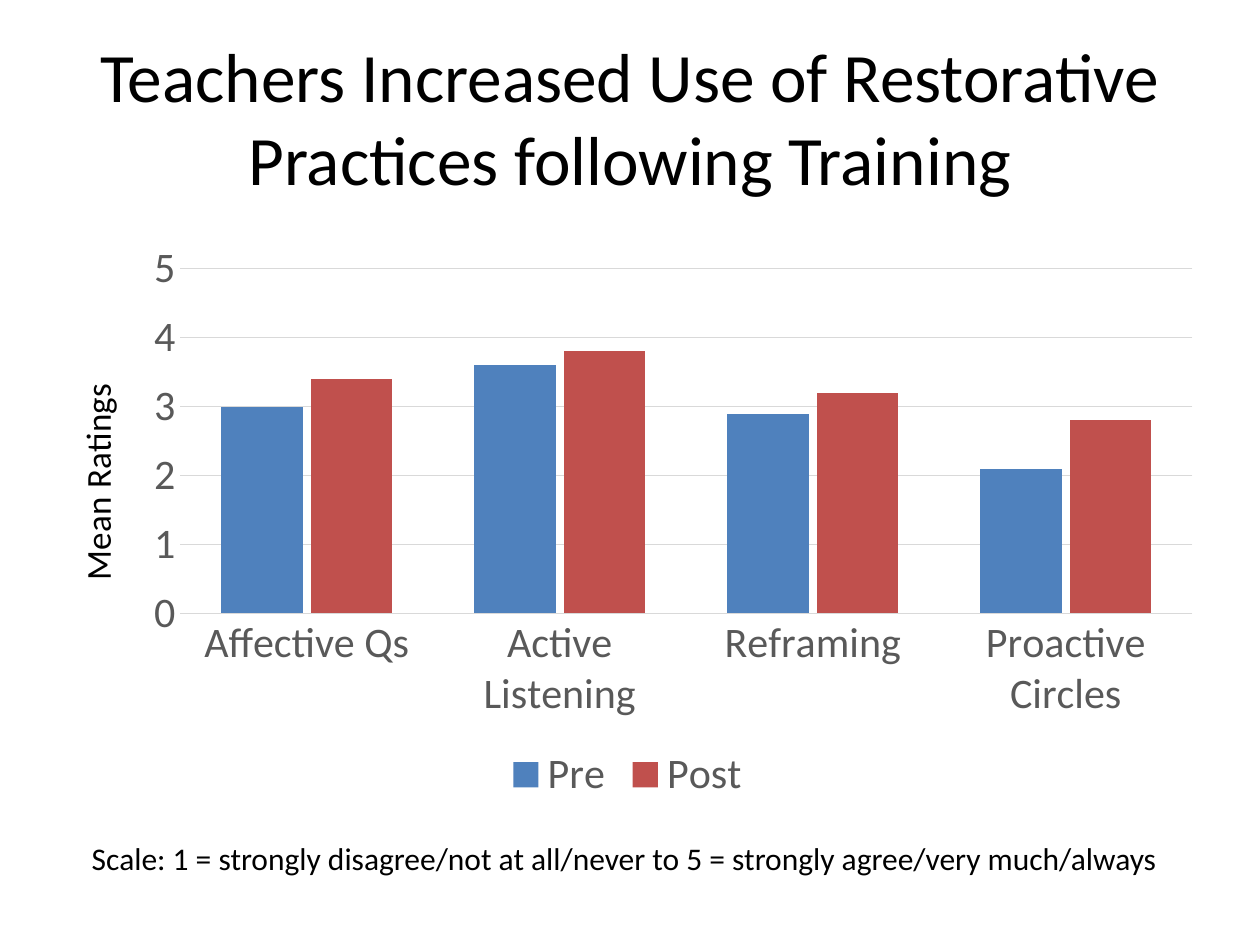
from dataclasses import dataclass

from lxml import etree
from pptx import Presentation
from pptx import util as u
from pptx.chart.data import CategoryChartData
from pptx.dml.color import RGBColor
from pptx.enum import chart as charts, text
from pptx.oxml.ns import qn


@dataclass(frozen=True)
class Theme:
    font: str = "Calibri"
    ink: str = "000000"
    label: str = "595959"
    rule: str = "D9D9D9"
    pre: str = "4F81BD"
    post: str = "C0504D"
    title_size: float = 39.6
    label_size: float = 24
    axis_title_size: float = 20
    note_size: float = 18
    rule_width: float = 0.75


def format_font(font, theme, size, color):
    font.name, font.size, font.bold = theme.font, u.Pt(size), False
    font.color.rgb = RGBColor.from_string(color)


def write_text(frame, content, *, theme, size, align=text.PP_ALIGN.LEFT):
    paragraph = frame.paragraphs[0]
    paragraph.alignment = align
    run = paragraph.add_run()
    run.text = content
    format_font(run.font, theme, size, theme.ink)


def place_plot(chart, **fractions):
    """Fix the inner plot area, in fractions of the chart's size."""
    plot_area = chart._chartSpace.chart.plotArea
    for old in plot_area.findall(qn("c:layout")):
        plot_area.remove(old)
    layout = etree.Element(qn("c:layout"))
    manual = etree.SubElement(layout, qn("c:manualLayout"))
    settings = {"layoutTarget": "inner", "xMode": "edge", "yMode": "edge", **fractions}
    for name, value in settings.items():
        etree.SubElement(manual, qn(f"c:{name}")).set("val", str(value))
    plot_area.insert(0, layout)


class SlideBuilder:
    def __init__(self, slide, theme):
        self.slide, self.theme = slide, theme

    def add_text(self, content, left, top, width, height, *, wrap=True,
                 anchor=text.MSO_ANCHOR.TOP, **style):
        box = self.slide.shapes.add_textbox(*map(u.Inches, (left, top, width, height)))
        frame = box.text_frame
        frame.word_wrap = wrap
        frame.vertical_anchor = anchor
        write_text(frame, content, theme=self.theme, **style)

    def style_rule(self, line):
        line.color.rgb = RGBColor.from_string(self.theme.rule)
        line.width = u.Pt(self.theme.rule_width)

    def add_column_chart(self, categories, series, value_title, left, top, width, height):
        """Draw clustered columns; series maps a name to (values, colour)."""
        theme = self.theme
        data = CategoryChartData()
        data.categories = categories
        for name, (values, _) in series.items():
            data.add_series(name, values)
        chart = self.slide.shapes.add_chart(
            charts.XL_CHART_TYPE.COLUMN_CLUSTERED,
            *map(u.Inches, (left, top, width, height)), data).chart
        chart.has_title = False
        format_font(chart.font, theme, theme.label_size, theme.label)

        plot = chart.plots[0]
        plot.gap_width, plot.overlap = 100, -10
        plot.vary_by_categories = False
        for columns, (_, color) in zip(plot.series, series.values()):
            columns.format.fill.solid()
            columns.format.fill.fore_color.rgb = RGBColor.from_string(color)
            columns.invert_if_negative = False

        for axis in (chart.category_axis, chart.value_axis):
            axis.major_tick_mark = axis.minor_tick_mark = charts.XL_TICK_MARK.NONE
            format_font(axis.tick_labels.font, theme, theme.label_size, theme.label)
        self.style_rule(chart.category_axis.format.line)

        value_axis = chart.value_axis
        value_axis.minimum_scale, value_axis.maximum_scale = 0, 5
        value_axis.major_unit = 1
        value_axis.format.line.fill.background()
        value_axis.has_major_gridlines = True
        self.style_rule(value_axis.major_gridlines.format.line)
        write_text(value_axis.axis_title.text_frame, value_title,
                   theme=theme, size=theme.axis_title_size)

        chart.has_legend = True
        chart.legend.position = charts.XL_LEGEND_POSITION.BOTTOM
        chart.legend.include_in_layout = False
        format_font(chart.legend.font, theme, theme.label_size, theme.label)
        place_plot(chart, x=0.12, y=0.06, w=0.86, h=0.6)


def main():
    theme = Theme()
    presentation = Presentation()
    presentation.slide_width, presentation.slide_height = u.Inches(10), u.Inches(7.5)
    slide = presentation.slides.add_slide(presentation.slide_layouts[6])
    builder = SlideBuilder(slide, theme)

    builder.add_text(
        "Teachers Increased Use of Restorative Practices following Training",
        0.5, 0.3, 9, 1.25, size=theme.title_size,
        align=text.PP_ALIGN.CENTER, anchor=text.MSO_ANCHOR.MIDDLE)
    builder.add_column_chart(
        ["Affective Qs", "Active Listening", "Reframing", "Proactive Circles"],
        {"Pre": ([3, 3.6, 2.9, 2.1], theme.pre),
         "Post": ([3.4, 3.8, 3.2, 2.8], theme.post)},
        "Mean Ratings", 0.31, 1.86, 9.34, 4.56)
    builder.add_text(
        "Scale: 1 = strongly disagree/not at all/never to 5 = strongly agree/very much/always",
        0.63, 6.61, 8.76, 0.4, size=theme.note_size, wrap=False)
    presentation.save("out.pptx")


if __name__ == "__main__":
    main()
